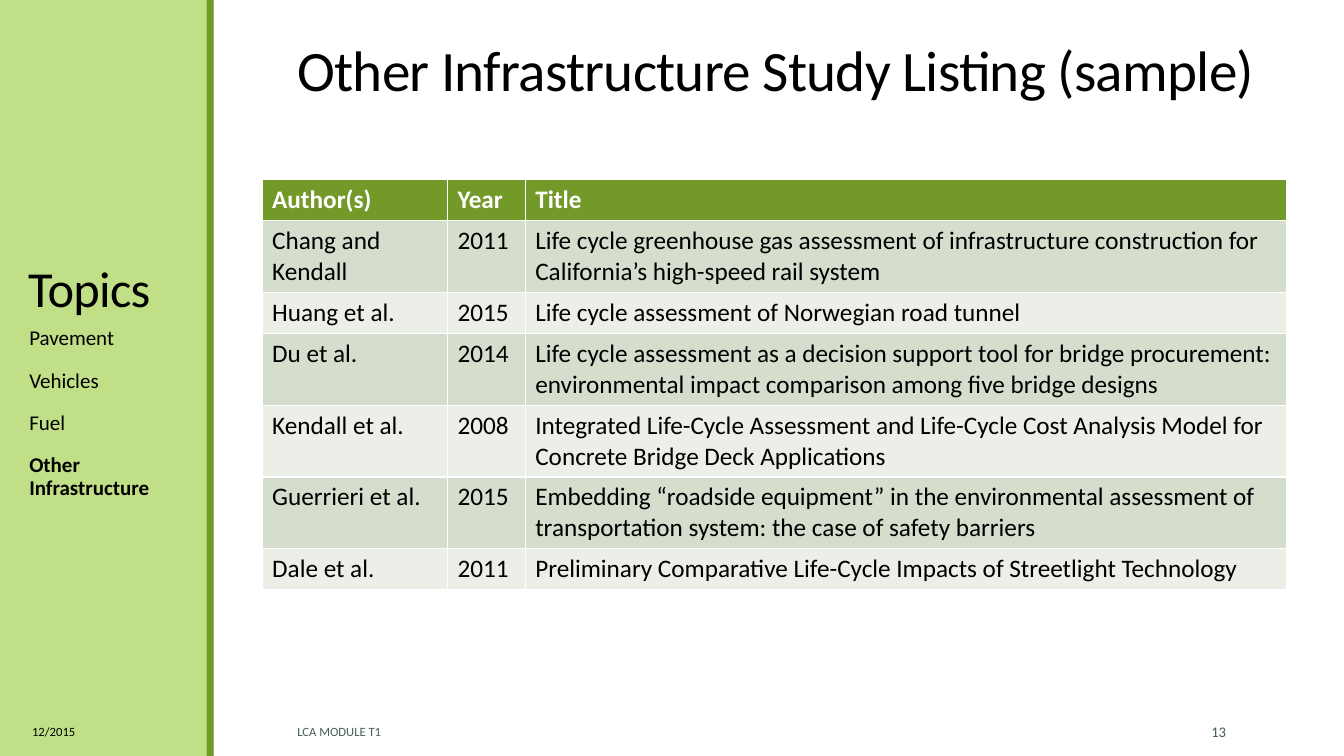
from lxml import etree
from pptx import Presentation
from pptx.dml.color import RGBColor
from pptx.enum.shapes import MSO_SHAPE
from pptx.enum.text import MSO_ANCHOR, MSO_AUTO_SIZE, PP_ALIGN
from pptx.oxml.ns import qn
from pptx.util import Inches, Pt

RECTANGLE = MSO_SHAPE.RECTANGLE
TOP, MIDDLE, BOTTOM = MSO_ANCHOR.TOP, MSO_ANCHOR.MIDDLE, MSO_ANCHOR.BOTTOM
LEFT, RIGHT = PP_ALIGN.LEFT, PP_ALIGN.RIGHT
NO_AUTOFIT = MSO_AUTO_SIZE.NONE

BLACK = RGBColor(0x00, 0x00, 0x00)
WHITE = RGBColor(0xFF, 0xFF, 0xFF)
LIME = RGBColor(0xC1, 0xDF, 0x87)
GREEN = RGBColor(0x73, 0x9A, 0x28)
SLATE = RGBColor(0x45, 0x5F, 0x51)
BAND_DARK = RGBColor(0xD5, 0xDE, 0xCD)
BAND_LIGHT = RGBColor(0xEB, 0xEF, 0xE8)


def place(box, left, top, width, height, anchor):
    box.left, box.top = Inches(left), Inches(top)
    box.width, box.height = Inches(width), Inches(height)
    frame = box.text_frame
    frame.word_wrap = True
    frame.auto_size = NO_AUTOFIT
    frame.vertical_anchor = anchor
    return frame


def style(paragraph, size, color, bold=False, align=LEFT, tracking=0):
    paragraph.alignment = align
    font = paragraph.font
    font.name, font.size, font.bold = "Calibri", Pt(size), bold
    font.color.rgb = color
    if tracking:
        font._rPr.set("spc", str(tracking))


prs = Presentation()
prs.slide_width, prs.slide_height = Inches(13.33), Inches(7.5)
slide = prs.slides.add_slide(prs.slide_layouts[1])
shapes = slide.shapes

# Sidebar panel and its edge, behind the text
for depth, (left, width, color) in enumerate([(-0.03, 2.15, LIME), (2.05, 0.07, GREEN)]):
    panel = shapes.add_shape(RECTANGLE, Inches(left), 0, Inches(width), prs.slide_height)
    panel.shadow.inherit = False
    panel.fill.solid()
    panel.fill.fore_color.rgb = color
    panel.line.fill.background()
    shapes._spTree.insert(2 + depth, panel._element)

# Sidebar heading
heading = place(shapes.title, 0.18, 0.7, 1.63, 2.5, BOTTOM).paragraphs[0]
heading.text = "Topics"
heading.line_spacing = 0.85
style(heading, 36, BLACK, tracking=-50)

# Topic list, current topic in bold
topics = ["Pavement", "Vehicles", "Fuel", "Other Infrastructure"]
topic_frame = place(slide.placeholders[1], 0.19, 3.2, 1.63, 3.7, TOP)
topic_frame.text = "\n".join(topics)
for number, topic in enumerate(topic_frame.paragraphs):
    topic.line_spacing = 0.9
    topic.space_before = Pt(12 if number else 0)
    topic.space_after = Pt(2)
    properties = topic._p.get_or_add_pPr()
    properties.set("marL", "0")
    properties.set("indent", "0")
    etree.SubElement(properties, qn("a:buNone"))
    style(topic, 15, BLACK, bold=number == len(topics) - 1)

# Slide heading
slide_heading = place(shapes.add_textbox(0, 0, 0, 0), 2.85, 0.09, 10.12, 0.97, BOTTOM).paragraphs[0]
slide_heading.text = "Other Infrastructure Study Listing (sample)"
slide_heading.line_spacing = 0.75
style(slide_heading, 40.8, BLACK, tracking=-50)

# Study table
studies = [
    ("Author(s)", "Year", "Title"),
    ("Chang and Kendall", "2011",
     "Life cycle greenhouse gas assessment of infrastructure construction for "
     "California’s high-speed rail system"),
    ("Huang et al.", "2015", "Life cycle assessment of Norwegian road tunnel"),
    ("Du et al.", "2014",
     "Life cycle assessment as a decision support tool for bridge procurement: "
     "environmental impact comparison among five bridge designs"),
    ("Kendall et al.", "2008",
     "Integrated Life-Cycle Assessment and Life-Cycle Cost Analysis Model for "
     "Concrete Bridge Deck Applications"),
    ("Guerrieri et al.", "2015",
     "Embedding “roadside equipment” in the environmental assessment of "
     "transportation system: the case of safety barriers"),
    ("Dale et al.", "2011",
     "Preliminary Comparative Life-Cycle Impacts of Streetlight Technology"),
]
row_height = 0.41
study_table = shapes.add_table(
    len(studies), 3, Inches(2.6), Inches(1.78),
    Inches(10.16), Inches(row_height * len(studies))).table
for column, width in zip(study_table.columns, (1.84, 0.77, 7.55)):
    column.width = Inches(width)
for row, study in enumerate(studies):
    is_header = row == 0
    band = GREEN if is_header else (BAND_DARK if row % 2 else BAND_LIGHT)
    for col, entry in enumerate(study):
        cell = study_table.cell(row, col)
        cell.text = entry
        cell.fill.solid()
        cell.fill.fore_color.rgb = band
        style(cell.text_frame.paragraphs[0], 18, WHITE if is_header else BLACK, bold=is_header)

# Footer: date, module, slide number
footers = [
    ("12/2015", 0.22, 1.62, 9, BLACK, LEFT),
    ("LCA MODULE T1", 2.85, 7.48, 9, SLATE, LEFT),
    ("13", 10.83, 1.43, 10.5, SLATE, RIGHT),
]
for label, left, width, size, color, align in footers:
    footer = place(shapes.add_textbox(0, 0, 0, 0), left, 7.06, width, 0.4, MIDDLE).paragraphs[0]
    footer.text = label
    style(footer, size, color, align=align)

prs.save("out.pptx")
